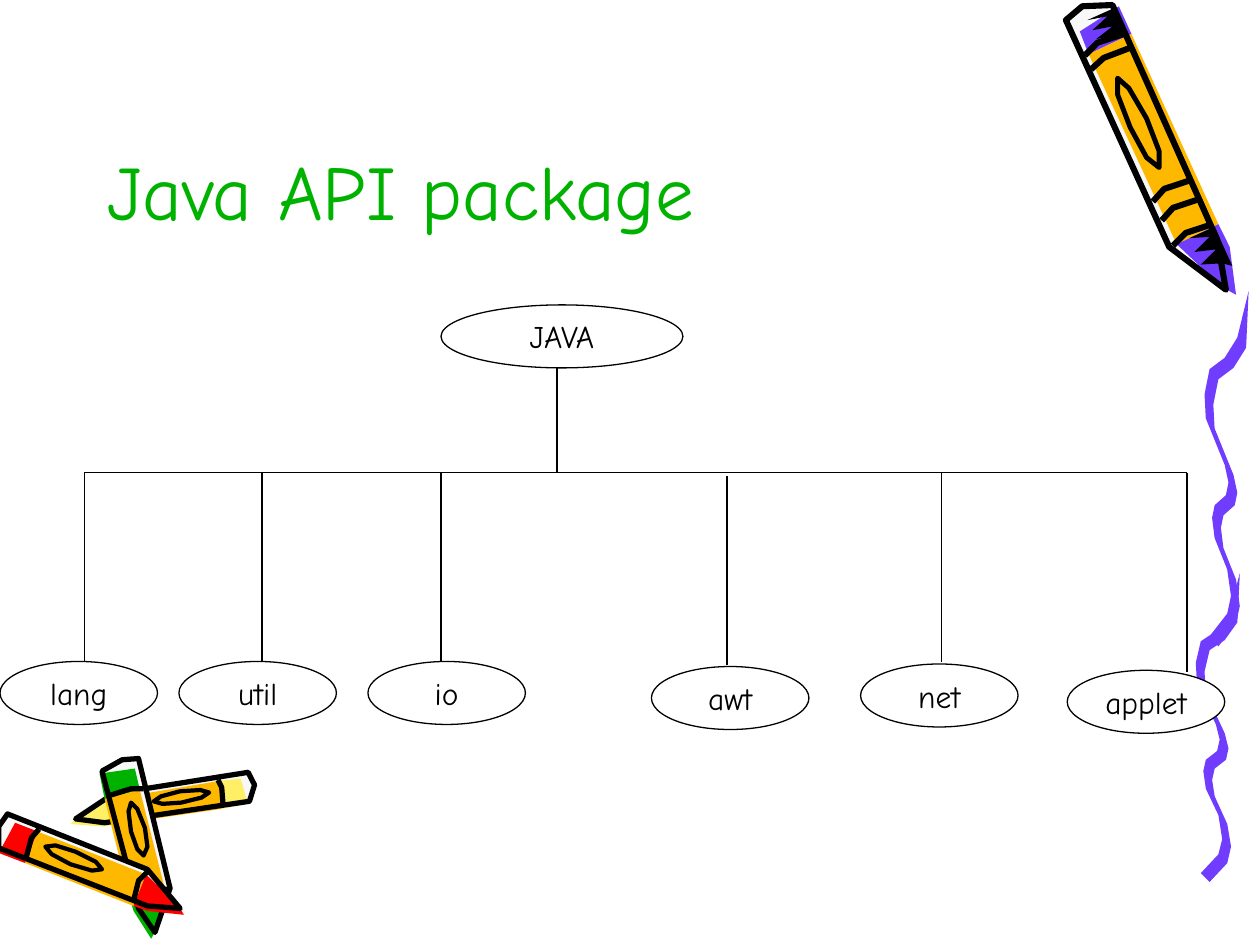
from dataclasses import dataclass
from lxml.etree import SubElement
from math import cos, hypot, pi, sin
from pptx import Presentation
from pptx.dml.color import RGBColor
from pptx.enum.shapes import MSO_CONNECTOR, MSO_SHAPE
from pptx.enum.text import MSO_ANCHOR, MSO_AUTO_SIZE, PP_ALIGN
from pptx.oxml.ns import qn
from pptx.util import Inches, Pt

PX = Inches(1) // 100
FONT = "Comic Neue"
COLOURS = {
    "black": "000000",
    "white": "FFFFFF",
    "paper": "F8F8F8",
    "purple": "703DFF",
    "orange": "FFB800",
    "yellow": "FFEF66",
    "red": "FF0000",
    "green": "00B200",
}

BAR_Y = 375
BRANCHES = [
    ("lang", (0, 525), 67, (BAR_Y, 525)),
    ("util", (142, 525), 208, (BAR_Y, 525)),
    ("io", (292, 525), 350, (BAR_Y, 525)),
    ("awt", (517, 529), 577, (378, 528)),
    ("net", (683, 527), 747, (BAR_Y, 525)),
    ("applet", (847, 532), 942, (BAR_Y, 533)),
]

SQUIGGLE_START = (991, 231)
SQUIGGLE_EDGE = [
    (982, 268), (972, 284), (960, 293), (956, 313), (957, 332),
    (972, 369), (975, 383), (973, 393), (964, 401), (962, 411),
    (964, 427), (974, 452), (977, 473), (974, 487), (960, 505),
]
SQUIGGLE_THICKNESS = (7, 8)


@dataclass
class Crayon:
    """A crayon from tail to tip; a negative half width mirrors its shading."""
    accent: str
    tail: tuple
    tip: tuple
    half_width: int
    bands: tuple = (15, 75)
    ink: float = 3
    hatched: bool = False

    def place(self, points):
        """Turn percentages along and across the crayon into px."""
        (x, y), (tip_x, tip_y) = self.tail, self.tip
        run, rise = tip_x - x, tip_y - y
        reach = self.half_width / hypot(run, rise)
        return [(round(x + (along * run + across * reach * rise) / 100),
                 round(y + (along * rise - across * reach * run) / 100))
                for along, across in points]


LARGE_CRAYON = Crayon("purple", (868, 14), (971, 236), 21,
                      bands=(10, 15, 62, 69, 78), ink=3.5, hatched=True)
CRAYON_PILE = [
    Crayon("yellow", (195, 626), (57, 648), 12),
    Crayon("green", (95, 610), (127, 742), -16),
    Crayon("red", (5, 662), (147, 719), -15),
]


def colour(name):
    """Return the named colour."""
    return RGBColor.from_string(COLOURS[name])


def add_outline(slide, points, fill=None, ink=0, close=True):
    """Draw a freeform that is filled, inked in black, or both."""
    builder = slide.shapes.build_freeform(*points[0], scale=PX)
    builder.add_line_segments(points[1:], close=close)
    outline = builder.convert_to_shape()
    outline.shadow.inherit = False
    if fill:
        outline.fill.solid()
        outline.fill.fore_color.rgb = colour(fill)
    else:
        outline.fill.background()
    if ink:
        outline.line.color.rgb = colour("black")
        outline.line.width = Pt(ink)
    else:
        outline.line.fill.background()


def hatching(start, end, teeth=3):
    """Return a comb of pointed teeth along one side of a crayon."""
    step = (end - start) / (2 * teeth)
    points = [(start + i * step, 50 if i % 2 else -25) for i in range(2 * teeth)]
    return [(start, 80), *points, (end, 80)]


def add_crayon(slide, crayon):
    """Draw backing, coloured parts and ink of a crayon."""
    first, last = crayon.bands[0], crayon.bands[-1]
    backing = [(-3, -100), (-5, -20), (-1, 85), (82, 72), (98, 20), (last, -105)]
    cap = [(2, -70), (0, 105), (first, 105), (first, -75)]
    wrapper = [(first, -75), (first, 105), (last, 100), (last, -75)]
    nib = [(last, -75), (last, 100), (last + 8, 100), (101, 45), (97, 10)]
    for fill, part in (("paper", backing), (crayon.accent, cap),
                       ("orange", wrapper), (crayon.accent, nib)):
        add_outline(slide, crayon.place(part), fill)

    add_outline(slide, crayon.place(backing), ink=crayon.ink)
    for band in crayon.bands:
        arch = [(band, -90), (band - 2, -30), (band - 1, 75)]
        add_outline(slide, crayon.place(arch), ink=crayon.ink, close=False)
    label = [(37 + 16 * cos(i * pi / 4), 35 * sin(i * pi / 4) - 15) for i in range(8)]
    add_outline(slide, crayon.place(label), ink=crayon.ink * 0.8)
    if crayon.hatched:
        for start, end in ((0, first), (last, 92)):
            add_outline(slide, crayon.place(hatching(start, end)), "black")


def add_squiggle(slide, shift_x=0, top=SQUIGGLE_START[1], stretch=1.0):
    """Draw a ribbon whose far edge is its near edge moved sideways."""
    thick_x, thick_y = SQUIGGLE_THICKNESS
    far_edge = [(x + thick_x, y + thick_y) for x, y in reversed(SQUIGGLE_EDGE)]
    ribbon = [(x + shift_x, round(top + (y - SQUIGGLE_START[1]) * stretch))
              for x, y in [SQUIGGLE_START, *SQUIGGLE_EDGE, *far_edge]]
    add_outline(slide, ribbon, "purple")


def add_line(slide, start, end):
    """Draw a thin straight black line."""
    ends = [value * PX for value in (*start, *end)]
    line = slide.shapes.add_connector(MSO_CONNECTOR.STRAIGHT, *ends)
    line.line.color.rgb = colour("black")
    line.line.width = Pt(0.75)
    SubElement(line._element.spPr, qn("a:effectLst"))


def format_text(frame, size, ink, align):
    """Style the only paragraph of a text frame."""
    paragraph = frame.paragraphs[0]
    paragraph.alignment = align
    font = paragraph.runs[0].font
    font.name, font.size = FONT, Pt(size)
    font.color.rgb = colour(ink)


def add_node(slide, name, left, top, width=125, height=50):
    """Draw a labelled ellipse of the tree."""
    box = [value * PX for value in (left, top, width, height)]
    node = slide.shapes.add_shape(MSO_SHAPE.OVAL, *box)
    node.shadow.inherit = False
    node.fill.solid()
    node.fill.fore_color.rgb = colour("white")
    node.line.color.rgb = colour("black")
    node.line.width = Pt(0.75)
    frame = node.text_frame
    frame.text = name
    frame.word_wrap = False
    frame.vertical_anchor = MSO_ANCHOR.MIDDLE
    format_text(frame, 18, "black", PP_ALIGN.CENTER)


def set_title(slide, text):
    """Place and format the title."""
    title = slide.shapes.title
    title.left, title.top, title.width, title.height = (
        value * PX for value in (75, 17, 751, 175))
    frame = title.text_frame
    frame.text = text
    frame.auto_size = MSO_AUTO_SIZE.NONE
    frame.vertical_anchor = MSO_ANCHOR.BOTTOM
    format_text(frame, 44, "green", PP_ALIGN.LEFT)


def add_tree(slide):
    """Draw the root, the bar and its branches."""
    add_node(slide, "JAVA", 350, 242, width=192)
    add_line(slide, (442, 292), (442, BAR_Y))
    add_line(slide, (BRANCHES[0][2], BAR_Y), (BRANCHES[-1][2], BAR_Y))
    for name, corner, stem_x, (stem_top, stem_bottom) in BRANCHES:
        add_line(slide, (stem_x, stem_top), (stem_x, stem_bottom))
        add_node(slide, name, *corner)


def main():
    """Build and save the slide."""
    deck = Presentation()
    deck.slide_width, deck.slide_height = 1000 * PX, 750 * PX
    slide = deck.slides.add_slide(deck.slide_layouts[5])
    for crayon in (*CRAYON_PILE, LARGE_CRAYON):
        add_crayon(slide, crayon)
    add_squiggle(slide, shift_x=-7, top=455, stretch=0.87)
    add_squiggle(slide)
    set_title(slide, "Java API package")
    add_tree(slide)
    deck.save("out.pptx")


if __name__ == "__main__":
    main()
